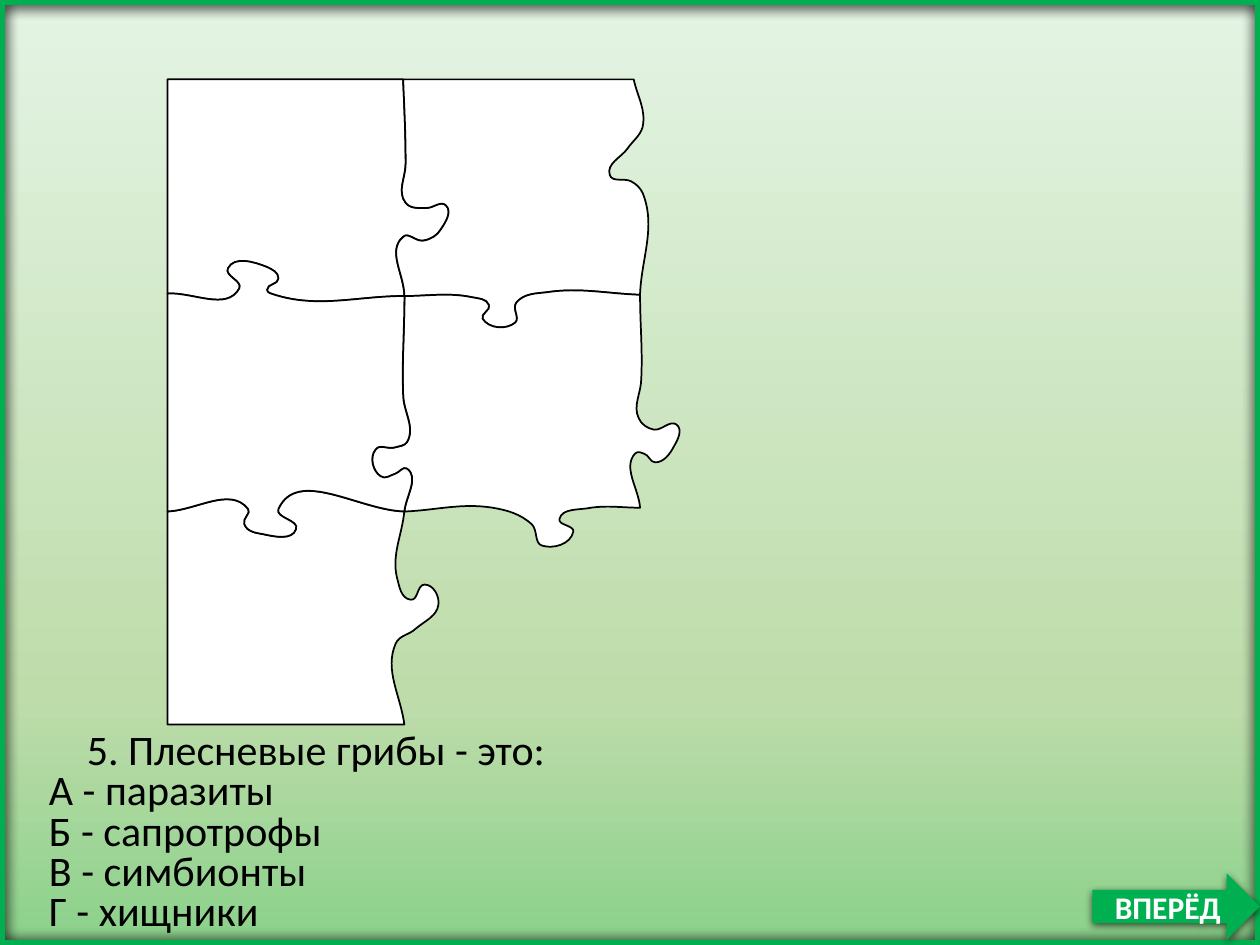
from math import hypot

from pptx import Presentation
from pptx.dml.color import RGBColor
from pptx.enum.shapes import MSO_SHAPE
from pptx.enum.text import MSO_ANCHOR, MSO_AUTO_SIZE, PP_ALIGN
from pptx.oxml import parse_xml
from pptx.oxml.ns import nsdecls, qn
from pptx.util import Pt

RECT, ARROW = MSO_SHAPE.RECTANGLE, MSO_SHAPE.RIGHT_ARROW
MIDDLE, GROW = MSO_ANCHOR.MIDDLE, MSO_AUTO_SIZE.SHAPE_TO_FIT_TEXT
JUSTIFY, CENTER = PP_ALIGN.JUSTIFY, PP_ALIGN.CENTER
PX = 9144  # 100 px to the inch
WIDTH, HEIGHT = 1000, 750

THEME = {
    "gradient": [(0, "E4F4E4"), (74, "BEDCAA"), (100, "8BD18B")],
    "green": "00B050", "white": "FFFFFF", "black": "000000",
    "question": {"name": "Calibri", "size": Pt(24)},
    "button": {"name": "Calibri", "size": Pt(18), "bold": True},
}

# text, first-line indent
LINES = [
    ("5. Плесневые грибы - это:", 49),
    ("А - паразиты", 19),
    ("Б - сапротрофы", 19),
    ("В - симбионты", 19),
    ("Г - хищники", 19),
]
LINES_LEFT, LINES_TOP, LINE_STEP = 10, 577, 32
BUTTON_TEXT, BUTTON_BOX = "ВПЕРЁД", (867, 693, 133, 53)

CORNERS = [
    [(133, 63), (320, 63), (503, 63)],
    [(133, 233), (321, 235), (508, 234)],
    [(133, 406), (321, 406), (508, 403)],
    [(133, 575), (321, 575)],
]
# Points of each wavy cut between its two corners, by row and column of the
# corner it starts from; edges that are not listed are straight.
ACROSS = {
    (1, 0): [(190, 229), (181, 213), (212, 212), (221, 221), (212, 230), (218, 234)],
    (1, 1): [(375, 236), (388, 242), (383, 253), (409, 256), (410, 240), (434, 232)],
    (2, 0): [(197, 404), (194, 416), (209, 424), (235, 420), (221, 404)],
    (2, 1): [(391, 403), (422, 416), (430, 433), (455, 422), (444, 412), (469, 403)],
}
DOWN = {
    (0, 1): [(322, 130), (322, 161), (339, 165), (354, 163), (350, 182), (336, 191), (320, 188)],
    (0, 2): [(510, 101), (498, 118), (484, 139), (501, 144), (510, 153)],
    (1, 1): [(320, 313), (323, 351), (314, 355), (298, 357), (302, 378), (314, 376), (323, 372)],
    (1, 2): [(509, 300), (507, 332), (519, 341), (537, 337), (535, 354), (520, 367), (511, 360),
             (504, 360)],
    (2, 1): [(315, 458), (326, 476), (337, 464), (348, 480), (330, 499), (314, 511)],
}
PIECES = [(0, 0), (0, 1), (1, 1), (2, 0), (1, 0)]  # row, column, back to front
BEND = 0.36  # handle length as a share of the distance between points


def color(name):
    return RGBColor.from_string(THEME[name])


def box(left, top, width, height):
    return [v * PX for v in (left, top, width, height)]


def paint(sp, fill=None, line=None, width=1):
    sp.shadow.inherit = False
    for part, name in ((sp.fill, fill), (sp.line.fill, line)):
        if name:
            part.solid()
            part.fore_color.rgb = color(name)
        else:
            part.background()
    if line:
        sp.line.width = Pt(width)


def add_gradient(sp):
    stops = "".join(f'<a:gs pos="{pos * 1000}"><a:srgbClr val="{rgb}"/></a:gs>'
                    for pos, rgb in THEME["gradient"])
    grad = parse_xml(f'<a:gradFill {nsdecls("a")}><a:gsLst>{stops}</a:gsLst>'
                     '<a:lin ang="5400000" scaled="0"/></a:gradFill>')
    sp_pr = sp._element.spPr
    sp_pr.replace(sp_pr.find(qn("a:noFill")), grad)


def add_shadow(sp, alpha, blur, distance):
    """Put a downward shadow in the shape's empty effect list."""
    sp._element.spPr.find(qn("a:effectLst")).append(parse_xml(
        f'<a:outerShdw {nsdecls("a")} blurRad="{Pt(blur)}" dist="{Pt(distance)}" dir="5400000" '
        f'rotWithShape="0"><a:srgbClr val="{THEME["black"]}"><a:alpha val="{alpha * 1000}"/>'
        '</a:srgbClr></a:outerShdw>'))


def unit(x, y):
    length = hypot(x, y) or 1
    return x / length, y / length


def smooth_curve(points):
    """Return the points with two Bezier handles between each pair."""
    steps = [unit(b[0] - a[0], b[1] - a[1]) for a, b in zip(points, points[1:])]
    turns = [unit(a[0] + b[0], a[1] + b[1])
             for a, b in zip(steps[:1] + steps, steps + steps[-1:])]
    curve = [points[0]]
    for i, (a, b) in enumerate(zip(points, points[1:])):
        reach = BEND * hypot(b[0] - a[0], b[1] - a[1])
        (ux, uy), (vx, vy) = turns[i:i + 2]
        curve += [(a[0] + reach * ux, a[1] + reach * uy),
                  (b[0] - reach * vx, b[1] - reach * vy), b]
    return curve


def across(row, col):
    start, end = CORNERS[row][col:col + 2]
    return smooth_curve([start, *ACROSS.get((row, col), []), end])


def down(row, col):
    start, end = CORNERS[row][col], CORNERS[row + 1][col]
    return smooth_curve([start, *DOWN.get((row, col), []), end])


def add_piece(shapes, row, col):
    """Join four edges clockwise, then turn each three line points into one curve."""
    points = (across(row, col) + down(row, col + 1)[1:]
              + across(row + 1, col)[-2::-1] + down(row, col)[-2::-1])
    builder = shapes.build_freeform(*points[0], scale=PX)
    builder.add_line_segments(points[1:], close=True)
    sp = builder.convert_to_shape()
    lines = list(sp._element.iter(qn("a:lnTo")))
    for i in range(0, len(lines) - 2, 3):
        curve = parse_xml(f'<a:cubicBezTo {nsdecls("a")}/>')
        lines[i].addprevious(curve)
        for line in lines[i:i + 3]:
            curve.append(line[0])
            line.getparent().remove(line)
    paint(sp, "white", "black")


def write(tf, text, align, font, font_color):
    p = tf.paragraphs[0]
    p.alignment = align
    r = p.add_run()
    r.text = text
    for key, value in THEME[font].items():
        setattr(r.font, key, value)
    r.font.color.rgb = color(font_color)
    return p


def main():
    prs = Presentation()
    prs.slide_width, prs.slide_height = WIDTH * PX, HEIGHT * PX
    shapes = prs.slides.add_slide(prs.slide_layouts[6]).shapes

    backdrop = shapes.add_shape(RECT, *box(0, 0, WIDTH, HEIGHT))
    paint(backdrop, line="white")
    add_gradient(backdrop)

    for row, col in PIECES:
        add_piece(shapes, row, col)

    frame = shapes.add_shape(RECT, *box(0, 0, WIDTH, HEIGHT))
    paint(frame, line="green", width=6)
    add_shadow(frame, 100, 8.5, 1)

    for i, (text, indent) in enumerate(LINES):
        sp = shapes.add_textbox(*box(LINES_LEFT, LINES_TOP + i * LINE_STEP, 982, 43))
        tf = sp.text_frame
        tf.word_wrap, tf.auto_size = True, GROW
        p = write(tf, text, JUSTIFY, "question", "black")
        p.line_spacing = 0.8
        p._p.get_or_add_pPr().set("indent", str(indent * PX))

    button = shapes.add_shape(ARROW, *box(*BUTTON_BOX))
    paint(button, "green")
    add_shadow(button, 63, 4.5, 1.5)
    button.text_frame.vertical_anchor = MIDDLE
    write(button.text_frame, BUTTON_TEXT, CENTER, "button", "white")

    prs.save("out.pptx")


if __name__ == "__main__":
    main()
